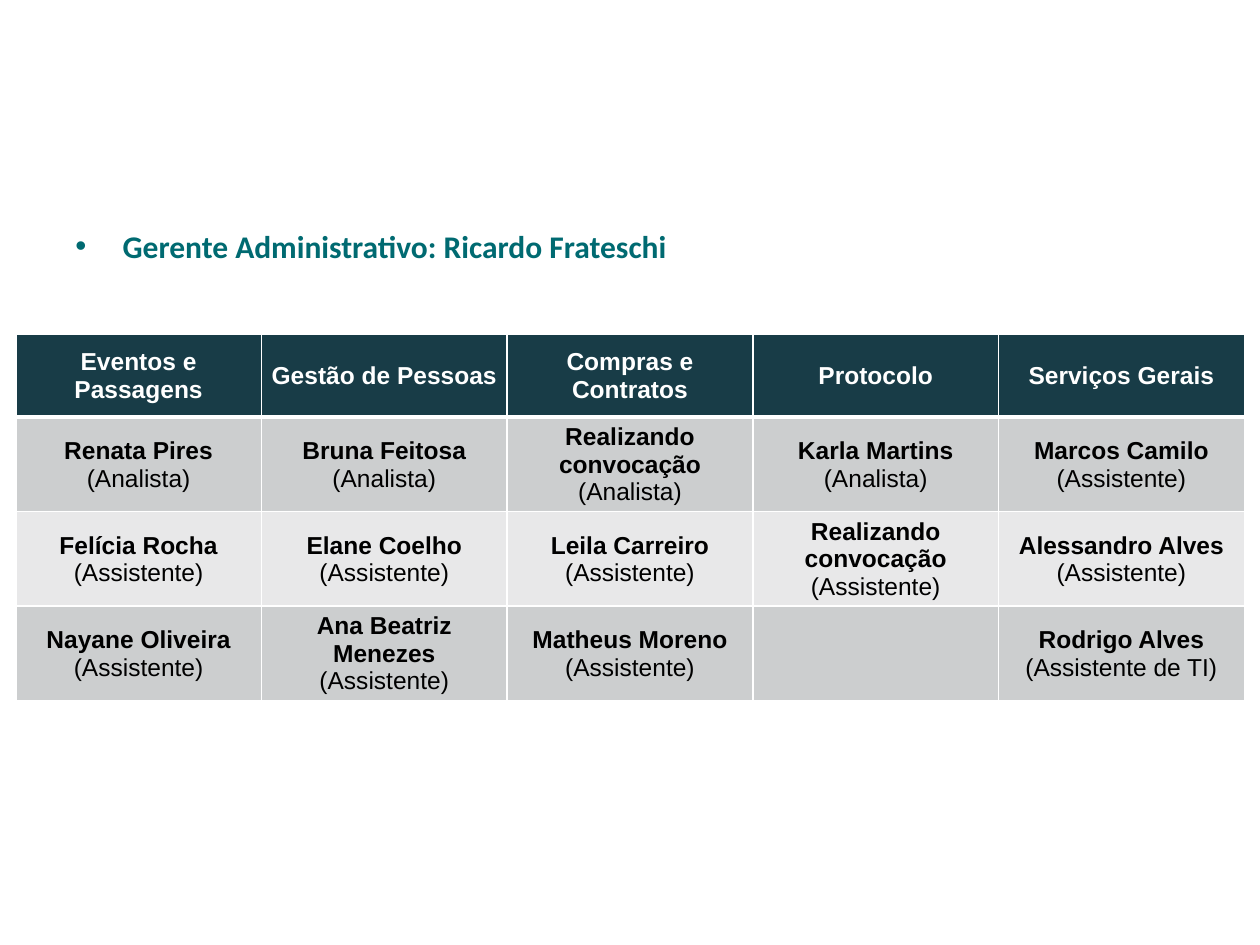
from dataclasses import dataclass
from typing import Optional

from lxml.etree import SubElement
from pptx import Presentation
from pptx.dml.color import RGBColor
from pptx.enum.text import MSO_ANCHOR, PP_ALIGN
from pptx.oxml.ns import qn
from pptx.util import Pt


@dataclass(frozen=True)
class Theme:
    teal: str = "006A71"
    header: str = "183C47"
    band_dark: str = "CCCECF"
    band_light: str = "E8E8E9"
    white: str = "FFFFFF"
    black: str = "000000"
    title_font: str = "Calibri"
    table_font: str = "Arial"
    title_size: float = 18
    table_size: float = 14


@dataclass(frozen=True)
class Member:
    name: str
    role: str = "Assistente"


THEME = Theme()
DEPARTMENTS = [
    "Eventos e Passagens",
    "Gestão de Pessoas",
    "Compras e Contratos",
    "Protocolo",
    "Serviços Gerais",
]
OPEN_POSITION = "Realizando convocação"
STAFF: list[list[Optional[Member]]] = [
    [
        Member("Renata Pires", "Analista"),
        Member("Bruna Feitosa", "Analista"),
        Member(OPEN_POSITION, "Analista"),
        Member("Karla Martins", "Analista"),
        Member("Marcos Camilo"),
    ],
    [
        Member("Felícia Rocha"),
        Member("Elane Coelho"),
        Member("Leila Carreiro"),
        Member(OPEN_POSITION),
        Member("Alessandro Alves"),
    ],
    [
        Member("Nayane Oliveira"),
        Member("Ana Beatriz Menezes"),
        Member("Matheus Moreno"),
        None,
        Member("Rodrigo Alves", "Assistente de TI"),
    ],
]
COLUMN_WIDTH = 140.4
HEADER_HEIGHT = 47.5
ROW_HEIGHT = 54


def write_text(paragraph, text: str, *, font: str = THEME.table_font,
               size: float = THEME.table_size, color: str = THEME.black,
               bold: bool = False, align=PP_ALIGN.CENTER) -> None:
    paragraph.alignment = align
    run = paragraph.add_run()
    run.text = text
    run.font.name = font
    run.font.size = Pt(size)
    run.font.bold = bold
    run.font.color.rgb = RGBColor.from_string(color)


def add_bullet(paragraph, indent: float) -> None:
    properties = paragraph._p.get_or_add_pPr()
    properties.set("marL", str(Pt(indent)))
    properties.set("indent", str(-Pt(indent)))
    SubElement(properties, qn("a:buFont"), typeface=THEME.table_font)
    SubElement(properties, qn("a:buChar"), char="•")


def format_cell(cell, fill: str, bottom_width: float = 1) -> None:
    properties = cell._tc.get_or_add_tcPr()
    for side in "LRTB":
        width = bottom_width if side == "B" else 1
        line = SubElement(properties, qn(f"a:ln{side}"), w=str(Pt(width)))
        line_fill = SubElement(line, qn("a:solidFill"))
        SubElement(line_fill, qn("a:srgbClr"), val=THEME.white)
    cell.fill.solid()
    cell.fill.fore_color.rgb = RGBColor.from_string(fill)
    cell.vertical_anchor = MSO_ANCHOR.MIDDLE
    cell.margin_left = cell.margin_right = cell.margin_top = Pt(0.72)
    cell.margin_bottom = Pt(0)


def add_manager(slide) -> None:
    box = slide.shapes.add_textbox(Pt(36), Pt(126), Pt(648), Pt(356.4))
    box.text_frame.word_wrap = True
    paragraph = box.text_frame.paragraphs[0]
    add_bullet(paragraph, 27)
    write_text(paragraph, "Gerente Administrativo: Ricardo Frateschi",
               font=THEME.title_font, size=THEME.title_size,
               color=THEME.teal, bold=True, align=PP_ALIGN.LEFT)


def add_staff_table(slide) -> None:
    table = slide.shapes.add_table(
        len(STAFF) + 1, len(DEPARTMENTS), Pt(9), Pt(190.8),
        Pt(COLUMN_WIDTH * len(DEPARTMENTS)),
        Pt(HEADER_HEIGHT + ROW_HEIGHT * len(STAFF)),
    ).table
    for column in table.columns:
        column.width = Pt(COLUMN_WIDTH)
    for index, row in enumerate(table.rows):
        row.height = Pt(ROW_HEIGHT if index else HEADER_HEIGHT)

    for column, department in enumerate(DEPARTMENTS):
        cell = table.cell(0, column)
        format_cell(cell, THEME.header, bottom_width=3)
        write_text(cell.text_frame.paragraphs[0], department,
                   color=THEME.white, bold=True)

    for row, members in enumerate(STAFF, start=1):
        fill = THEME.band_dark if row % 2 else THEME.band_light
        for column, member in enumerate(members):
            cell = table.cell(row, column)
            format_cell(cell, fill)
            if member:
                frame = cell.text_frame
                write_text(frame.paragraphs[0], member.name, bold=True)
                write_text(frame.add_paragraph(), f"({member.role})")


def main() -> None:
    presentation = Presentation()
    presentation.slide_width = Pt(720)
    presentation.slide_height = Pt(540)
    slide = presentation.slides.add_slide(presentation.slide_layouts[6])
    add_manager(slide)
    add_staff_table(slide)
    presentation.save("out.pptx")


if __name__ == "__main__":
    main()
